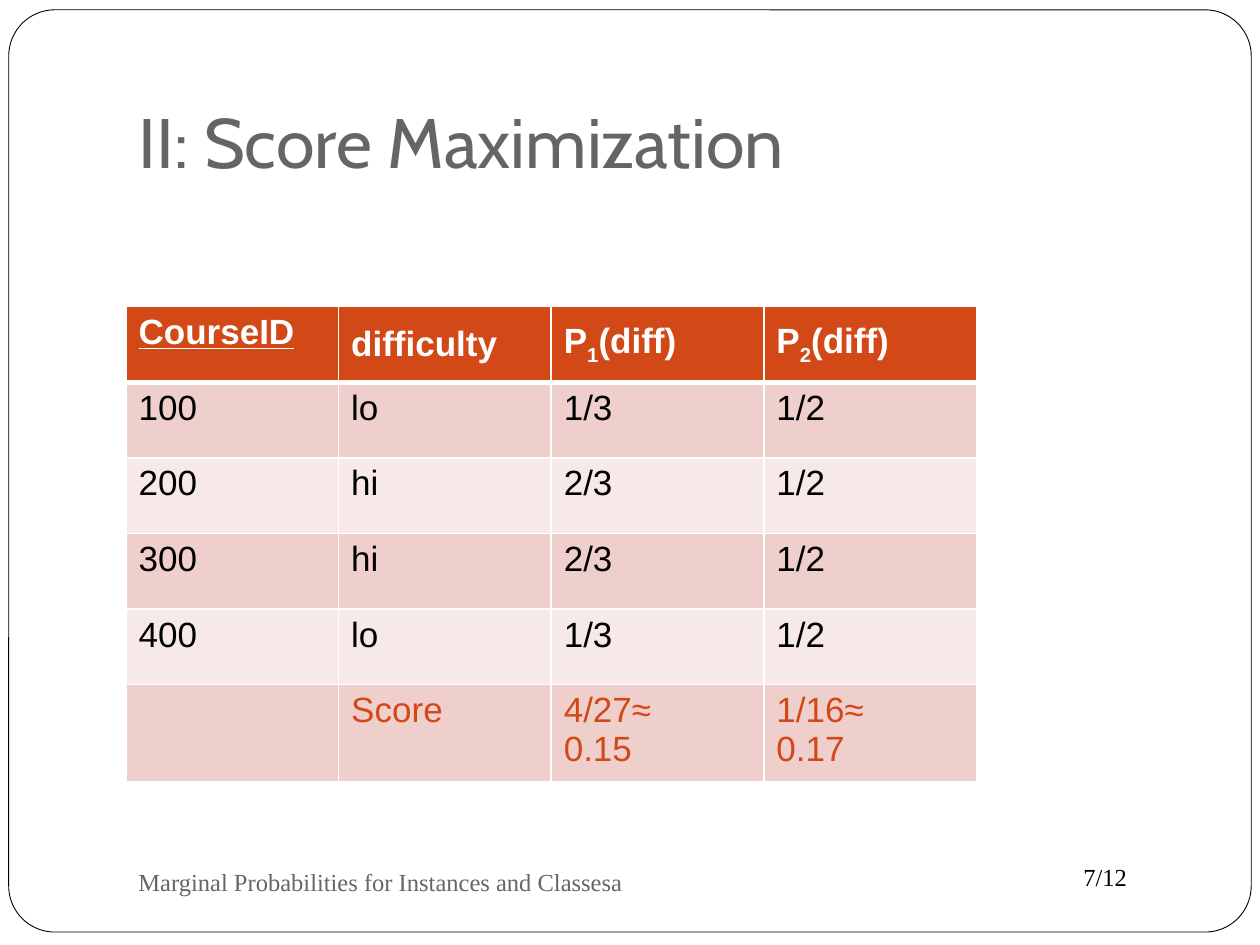
"""Build the Score Maximization slide with its probability table."""
from lxml import etree
from pptx import Presentation
from pptx.dml.color import RGBColor
from pptx.enum.shapes import MSO_SHAPE
from pptx.enum.text import MSO_ANCHOR, PP_ALIGN
from pptx.oxml.ns import qn
from pptx.util import Pt

WHITE = RGBColor(0xFF, 0xFF, 0xFF)
BLACK = RGBColor(0, 0, 0)
GRAY = RGBColor(0x69, 0x64, 0x64)
ORANGE = RGBColor(0xD3, 0x48, 0x17)
ROSE = RGBColor(0xEF, 0xCF, 0xCC)
PALE_ROSE = RGBColor(0xF7, 0xE9, 0xE8)
SERIF = "Times New Roman"


def add_run(paragraph, text, color, **formats):
    run = paragraph.add_run()
    run.text = text
    run.font.color.rgb = color
    for name, value in formats.items():
        setattr(run.font, name, value)
    return run


def set_borders(cell, widths):
    properties = cell._tc.get_or_add_tcPr()
    for index, (side, width) in enumerate(widths.items()):
        line = etree.Element(qn(f"a:ln{side}"), w=str(Pt(width)))
        fill = etree.SubElement(line, qn("a:solidFill"))
        etree.SubElement(fill, qn("a:srgbClr"), val=str(WHITE))
        properties.insert(index, line)


presentation = Presentation()
presentation.slide_width = Pt(720)
presentation.slide_height = Pt(540)
slide = presentation.slides.add_slide(presentation.slide_layouts[5])

title = slide.shapes.title
title_box = {"left": Pt(72), "top": Pt(21.6), "width": Pt(612), "height": Pt(90)}
for name, value in title_box.items():
    setattr(title, name, value)
title_format = {
    "vertical_anchor": MSO_ANCHOR.BOTTOM, "margin_left": Pt(7.2),
    "margin_right": Pt(7.2), "margin_top": Pt(3.6), "margin_bottom": Pt(7.2),
}
for name, value in title_format.items():
    setattr(title.text_frame, name, value)
title_paragraph = title.text_frame.paragraphs[0]
title_paragraph.alignment = PP_ALIGN.LEFT
add_run(title_paragraph, "II: Score Maximization", GRAY, size=Pt(40), name="Cabin")

frame = slide.shapes.add_shape(
    MSO_SHAPE.ROUNDED_RECTANGLE, Pt(5), Pt(5.6), Pt(710), Pt(527))
frame.adjustments[0] = 0.05
frame.shadow.inherit = False
frame.fill.solid()
frame.fill.fore_color.rgb = WHITE
frame.line.color.rgb = BLACK
frame.line.width = Pt(0.5)
title.element.addprevious(frame.element)

captions = [
    ("7/12", BLACK, MSO_ANCHOR.TOP, (612, 489, 72, 24.5)),
    ("Marginal Probabilities for Instances and Classesa", GRAY,
     MSO_ANCHOR.MIDDLE, (72, 486, 312, 36)),
]
for text, color, anchor, box in captions:
    caption = slide.shapes.add_textbox(*map(Pt, box))
    caption.text_frame.word_wrap = True
    caption.text_frame.vertical_anchor = anchor
    add_run(caption.text_frame.paragraphs[0], text, color, size=Pt(14), name=SERIF)

headers = [["CourseID"], ["difficulty"], ["P", "1", "(diff)"], ["P", "2", "(diff)"]]
body = [
    ["100", "lo", "1/3", "1/2"],
    ["200", "hi", "2/3", "1/2"],
    ["300", "hi", "2/3", "1/2"],
    ["400", "lo", "1/3", "1/2"],
    ["", "Score", "4/27≈\n0.15", "1/16≈\n0.17"],
]
score_row = len(body)
table = slide.shapes.add_table(
    score_row + 1, len(headers), Pt(72), Pt(175.2), Pt(486), Pt(267)).table
for column in table.columns:
    column.width = Pt(121.5)
for row in table.rows:
    row.height = Pt(43.2)
table.rows[score_row].height = Pt(51)

for column, parts in enumerate(headers):
    cell = table.cell(0, column)
    cell.fill.solid()
    cell.fill.fore_color.rgb = ORANGE
    cell.vertical_anchor = MSO_ANCHOR.MIDDLE if column else MSO_ANCHOR.TOP
    set_borders(cell, {"L": 1, "R": 1, "T": 1, "B": 3})
    for part in parts:
        run = add_run(cell.text_frame.paragraphs[0], part, WHITE, size=Pt(20),
                      name="Arial", bold=True, underline=column == 0)
        if part.isdigit():
            run.font._element.set("baseline", "-25000")

for row, values in enumerate(body, start=1):
    for column, value in enumerate(values):
        cell = table.cell(row, column)
        cell.fill.solid()
        cell.fill.fore_color.rgb = ROSE if row % 2 else PALE_ROSE
        set_borders(cell, {"L": 1, "R": 1, "T": 3 if row == 1 else 1, "B": 1})
        if not value:
            continue
        for index, text in enumerate(value.split("\n")):
            text_frame = cell.text_frame
            paragraph = text_frame.add_paragraph() if index else text_frame.paragraphs[0]
            add_run(paragraph, text, ORANGE if row == score_row else BLACK,
                    size=Pt(20), name="Arial", bold=False)

presentation.save("out.pptx")
